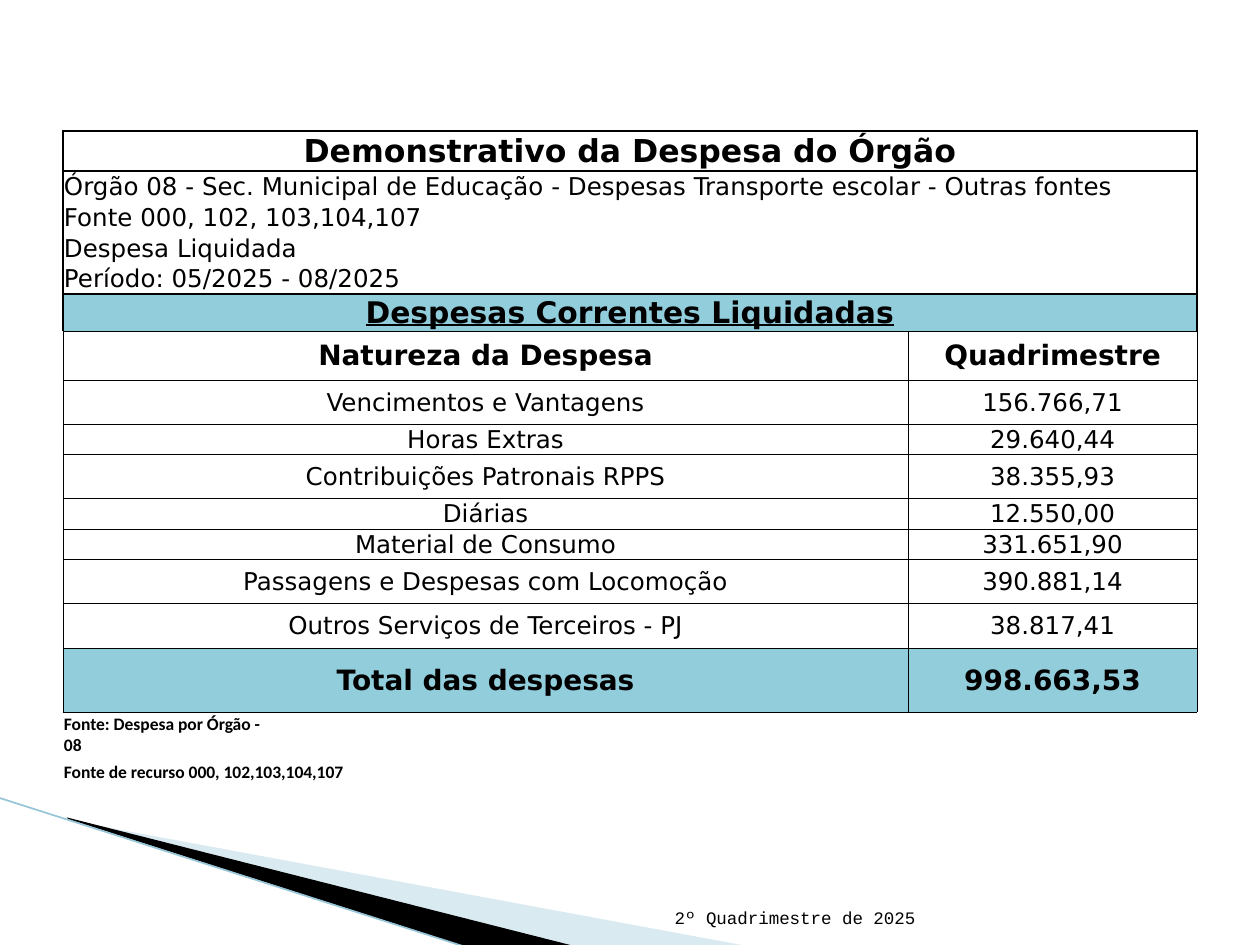
from lxml.etree import SubElement
from pptx import Presentation
from pptx.dml.color import RGBColor
from pptx.enum.shapes import MSO_CONNECTOR as Connector
from pptx.enum.text import MSO_ANCHOR as Anchor, PP_ALIGN as Align
from pptx.oxml.ns import qn
from pptx.util import Cm, Pt

BLACK = RGBColor(0x00, 0x00, 0x00)
WHITE = RGBColor(0xFF, 0xFF, 0xFF)
BAND_BLUE = RGBColor(0x92, 0xCD, 0xDC)
PALE_BLUE = RGBColor(0xA0, 0xCB, 0xDC)
EDGE_BLUE = RGBColor(0x97, 0xC5, 0xD8)

THIN, THICK = 0.5, 1
GRID = dict.fromkeys("LRTB", THIN)
FRAME = dict.fromkeys("LRTB", THICK)
SIDES = dict.fromkeys("LR", THICK)

COLUMN_WIDTHS = [4.14, 3.63, 3.63, 3.63, 2.01, 5.82]
LAST = len(COLUMN_WIDTHS) - 1
TITLE = "Demonstrativo da Despesa do Órgão"
DETAILS = [
    ("Órgão 08 - Sec. Municipal de Educação - Despesas Transporte escolar - Outras fontes",
     Anchor.BOTTOM, SIDES | {"T": THICK}),
    ("Fonte 000, 102, 103,104,107", Anchor.MIDDLE, SIDES),
    ("Despesa Liquidada", Anchor.MIDDLE, SIDES),
    ("Período: 05/2025 - 08/2025", Anchor.TOP, SIDES | {"B": THICK}),
]
BANNER = "Despesas Correntes Liquidadas"
HEADING = ("Natureza da Despesa", "Quadrimestre")
EXPENSES = [
    ("Vencimentos e Vantagens", "156.766,71", 0.89),
    ("Horas Extras", "29.640,44", 0.6),
    ("Contribuições Patronais RPPS", "38.355,93", 0.89),
    ("Diárias", "12.550,00", 0.6),
    ("Material de Consumo", "331.651,90", 0.6),
    ("Passagens e Despesas com Locomoção", "390.881,14", 0.89),
    ("Outros Serviços de Terceiros - PJ", "38.817,41", 0.89),
]
TOTAL = ("Total das despesas", "998.663,53")
SOURCES = [
    ("Fonte: Despesa por Órgão - 08", 0, {"T": THIN}, 0.9),
    ("Fonte de recurso 000, 102,103,104,107", 1, {}, 0.53),
]
ROW_HEIGHTS = ([0.81] + [0.62] * len(DETAILS) + [0.74, 0.99]
               + [height for *_, height in EXPENSES] + [1.29]
               + [height for *_, height in SOURCES])


def write(frame, text, *, size=14, font="DejaVu Sans", bold=False,
          underline=False, align=Align.LEFT):
    paragraph = frame.paragraphs[0]
    paragraph.alignment = align
    if not text:
        # An empty cell takes its line height from the end-of-paragraph mark.
        SubElement(paragraph._p, qn("a:endParaRPr"), sz=str(size * 100))
        return
    run = paragraph.add_run()
    run.text = text
    run.font.size = Pt(size)
    run.font.name = font
    run.font.bold = bold
    run.font.underline = underline
    run.font.color.rgb = BLACK


def set_borders(cell, widths):
    """Draw the sides named in widths (L, R, T, B) and clear the others."""
    properties = cell._tc.get_or_add_tcPr()
    for side in "LRTB":
        line = SubElement(properties, qn(f"a:ln{side}"),
                          w=str(Pt(widths.get(side, 0))))
        if side in widths:
            fill = SubElement(line, qn("a:solidFill"))
            SubElement(fill, qn("a:srgbClr"), val=str(BLACK))
        else:
            SubElement(line, qn("a:noFill"))


class ReportSlide:
    def __init__(self, deck):
        self.shapes = deck.slides.add_slide(deck.slide_layouts[6]).shapes

    def wedge(self, points, color, alpha=None):
        corners = [(Cm(x), Cm(y)) for x, y in points]
        builder = self.shapes.build_freeform(*corners[0])
        builder.add_line_segments(corners[1:])
        shape = builder.convert_to_shape()
        shape.shadow.inherit = False
        shape.fill.solid()
        shape.fill.fore_color.rgb = color
        shape.line.fill.background()
        if alpha is not None:
            tint = shape._element.spPr.find(f".//{qn('a:srgbClr')}")
            SubElement(tint, qn("a:alpha"), val=str(alpha * 1000))

    def line(self, start, end, color, width):
        line = self.shapes.add_connector(
            Connector.STRAIGHT, *map(Cm, start + end))
        line.line.color.rgb = color
        line.line.width = Pt(width)
        SubElement(line._element.spPr, qn("a:effectLst"))

    def text(self, text, left, top, width, height, **style):
        frame = self.shapes.add_textbox(
            *map(Cm, (left, top, width, height))).text_frame
        frame.word_wrap = True
        frame.vertical_anchor = Anchor.BOTTOM
        write(frame, text, **style)

    def table(self, left, top, widths, heights):
        self.grid = self.shapes.add_table(
            len(heights), len(widths), Cm(left), Cm(top),
            Cm(sum(widths)), Cm(sum(heights))).table
        self.grid.first_row = self.grid.horz_banding = False
        for column, width in zip(self.grid.columns, widths):
            column.width = Cm(width)
        for row, height in zip(self.grid.rows, heights):
            row.height = Cm(height)

    def cell(self, row, first, last, text, *, fill=WHITE, borders=GRID,
             anchor=Anchor.MIDDLE, **style):
        """Fill the cells first to last of a row, merged into one."""
        for column in range(first, last + 1):
            part = self.grid.cell(row, column)
            set_borders(part, borders)
            part.fill.solid()
            part.fill.fore_color.rgb = fill
        origin = self.grid.cell(row, first)
        if last > first:
            origin.merge(self.grid.cell(row, last))
        origin.margin_left = origin.margin_right = origin.margin_top = Cm(0.02)
        origin.margin_bottom = 0
        origin.vertical_anchor = anchor
        write(origin.text_frame, text, **style)

    def pair(self, row, label, value, **style):
        self.cell(row, 0, LAST - 1, label, align=Align.CENTER, **style)
        self.cell(row, LAST, LAST, value, align=Align.CENTER, **style)


def main():
    deck = Presentation()
    deck.slide_width, deck.slide_height = Cm(25.4), Cm(19.05)
    slide = ReportSlide(deck)

    slide.wedge([(1.4, 16.54), (15.11, 19.08), (11.58, 19.08), (1.4, 16.51)],
                PALE_BLUE, alpha=40)
    slide.wedge([(1.35, 16.48), (11.61, 19.08), (9.45, 19.1), (1.37, 16.51)],
                BLACK)
    slide.line((-0.03, 16.08), (9.42, 19.1), EDGE_BLUE, 0.95)
    slide.text("2º Quadrimestre de 2025", 12.17, 17.81, 6.53, 1.02,
               size=10, font="Courier New", align=Align.RIGHT)

    slide.table(1.27, 2.64, COLUMN_WIDTHS, ROW_HEIGHTS)
    rows = iter(range(len(ROW_HEIGHTS)))
    slide.cell(next(rows), 0, LAST, TITLE, borders=FRAME,
               size=18, bold=True, align=Align.CENTER)
    for detail, anchor, borders in DETAILS:
        slide.cell(next(rows), 0, LAST, detail, anchor=anchor, borders=borders)
    slide.cell(next(rows), 0, LAST, BANNER, fill=BAND_BLUE,
               borders=FRAME | {"B": THIN}, size=17, bold=True,
               underline=True, align=Align.CENTER)
    slide.pair(next(rows), *HEADING, size=16, bold=True)
    for label, value, _ in EXPENSES:
        slide.pair(next(rows), label, value)
    slide.pair(next(rows), *TOTAL, fill=BAND_BLUE, size=16, bold=True)
    for source, last, borders, _ in SOURCES:
        row = next(rows)
        note = dict(borders=borders, anchor=Anchor.BOTTOM, size=10,
                    font="Calibri", bold=True)
        slide.cell(row, 0, last, source, **note)
        for column in range(last + 1, LAST + 1):
            slide.cell(row, column, column, "", **note)

    deck.save("out.pptx")


if __name__ == "__main__":
    main()
